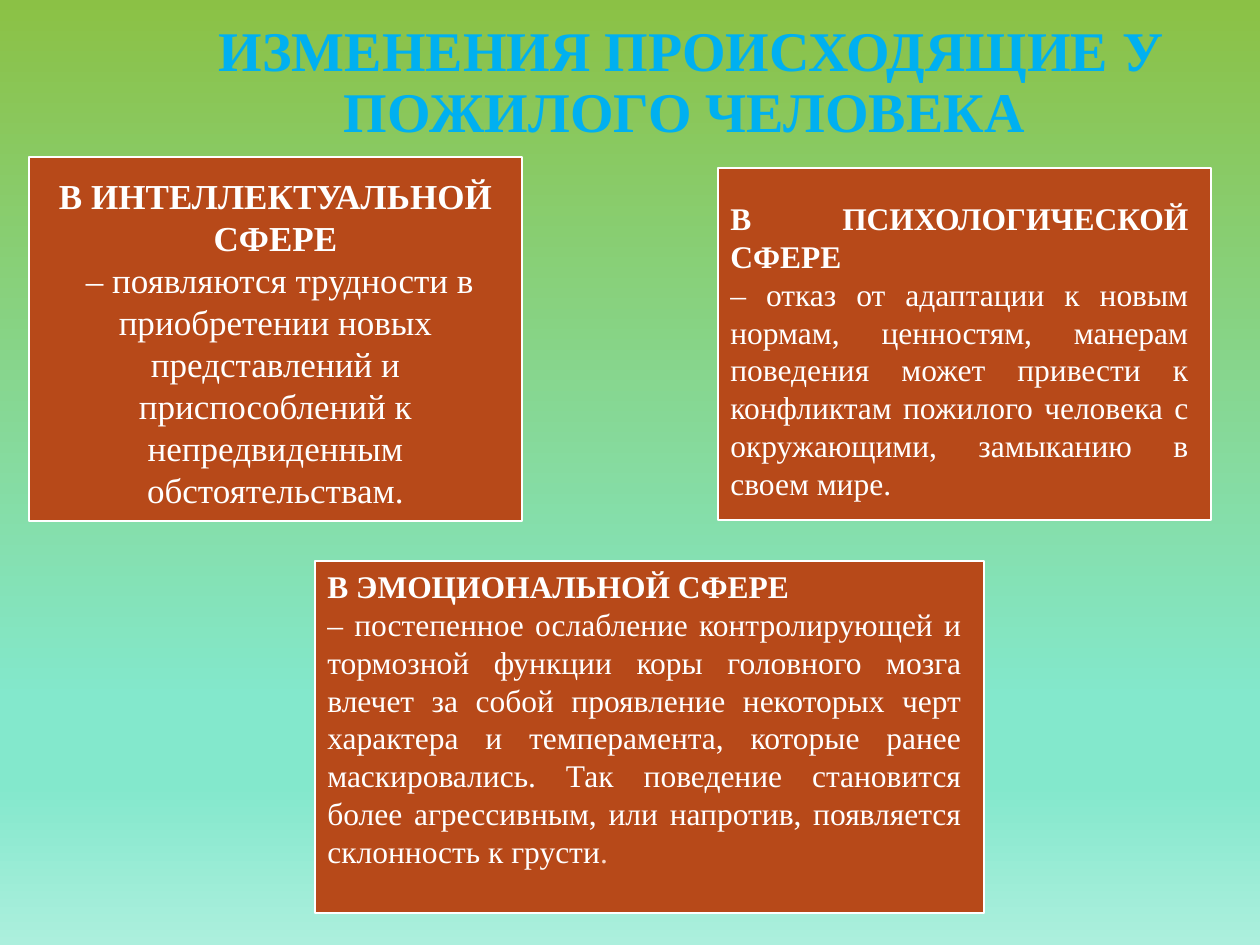
"""Build a slide on the changes an elderly person goes through in three spheres."""
from copy import deepcopy

from pptx import Presentation
from pptx import util as u
from pptx.dml.color import RGBColor
from pptx.enum import shapes, text

PX = 914400 // 126
FONT = "Times New Roman"
SKY = RGBColor(0x00, 0xB0, 0xF0)
RUST = RGBColor(0xB7, 0x49, 0x19)
WHITE = RGBColor(0xFF, 0xFF, 0xFF)
PEACH = RGBColor(0xF8, 0xD8, 0xCA)
GREEN = RGBColor(0x8B, 0xC1, 0x45)
AQUA = RGBColor(0x83, 0xE8, 0xCC)
MINT = RGBColor(0xAC, 0xEF, 0xDD)
BACKDROP = [(0, GREEN), (0.74, AQUA), (0.83, AQUA), (1, MINT)]
CENTER, JUSTIFY = text.PP_ALIGN.CENTER, text.PP_ALIGN.JUSTIFY

SPHERES = [
    ((29, 157, 493, 364), (29, 168, 493, 352), 20, CENTER,
     "В ИНТЕЛЛЕКТУАЛЬНОЙ СФЕРЕ",
     [(" – появляются трудности в приобретении новых представлений и "
       "приспособлений к непредвиденным обстоятельствам.", WHITE)]),
    ((718, 168, 493, 352), (718, 193, 483, 357), 18, JUSTIFY,
     "В ПСИХОЛОГИЧЕСКОЙ СФЕРЕ ",
     [("– отказ от адаптации к новым нормам, ценностям, манерам поведения "
       "может привести к конфликтам пожилого человека с окружающими, "
       "замыканию в своем мире.", WHITE)]),
    ((315, 561, 669, 352), (315, 561, 659, 318), 18, JUSTIFY,
     "В ЭМОЦИОНАЛЬНОЙ СФЕРЕ ",
     [("– постепенное ослабление контролирующей и тормозной функции коры "
       "головного мозга влечет за собой проявление некоторых черт характера "
       "и темперамента, которые ранее маскировались. Так поведение становится "
       "более агрессивным, или напротив, появляется склонность к грусти", WHITE),
      (". ", PEACH)]),
]


def scaled(place):
    return [length * PX for length in place]


def style(run, size, color, bold):
    run.font.name = FONT
    run.font.size = u.Pt(size)
    run.font.bold = bold
    run.font.color.rgb = color


prs = Presentation()
prs.slide_width, prs.slide_height = u.Inches(10), u.Inches(7.5)
slide = prs.slides.add_slide(prs.slide_layouts[5])

backdrop = slide.background.fill
backdrop.gradient()
backdrop.gradient_angle = 270
stop_list = slide._element.xpath(".//a:gsLst")[0]
for _ in BACKDROP[2:]:
    stop_list.append(deepcopy(stop_list[0]))
for stop, (position, color) in zip(backdrop.gradient_stops, BACKDROP):
    stop.position = position
    stop.color.rgb = color

title = slide.shapes.title
title.left, title.top, title.width, title.height = scaled((123, 0, 1137, 168))
title.text_frame.text = "ИЗМЕНЕНИЯ ПРОИСХОДЯЩИЕ У ПОЖИЛОГО ЧЕЛОВЕКА "
title.text_frame.vertical_anchor = text.MSO_ANCHOR.MIDDLE
headline = title.text_frame.paragraphs[0]
headline.alignment = CENTER
headline.line_spacing = 0.9
style(headline.runs[0], 32, SKY, True)

for panel_place, words_place, size, alignment, sphere, changes in SPHERES:
    panel = slide.shapes.add_shape(shapes.MSO_SHAPE.RECTANGLE, *scaled(panel_place))
    panel.shadow.inherit = False
    panel.fill.solid()
    panel.fill.fore_color.rgb = RUST
    panel.line.color.rgb = WHITE
    panel.line.width = u.Pt(1.5)

    words = slide.shapes.add_textbox(*scaled(words_place)).text_frame
    words.word_wrap = True
    words.auto_size = text.MSO_AUTO_SIZE.SHAPE_TO_FIT_TEXT
    words.text = sphere
    heading, description = words.paragraphs[0], words.add_paragraph()
    heading.alignment = description.alignment = alignment
    style(heading.runs[0], size, WHITE, True)
    for wording, color in changes:
        run = description.add_run()
        run.text = wording
        style(run, size, color, False)

prs.save("out.pptx")
